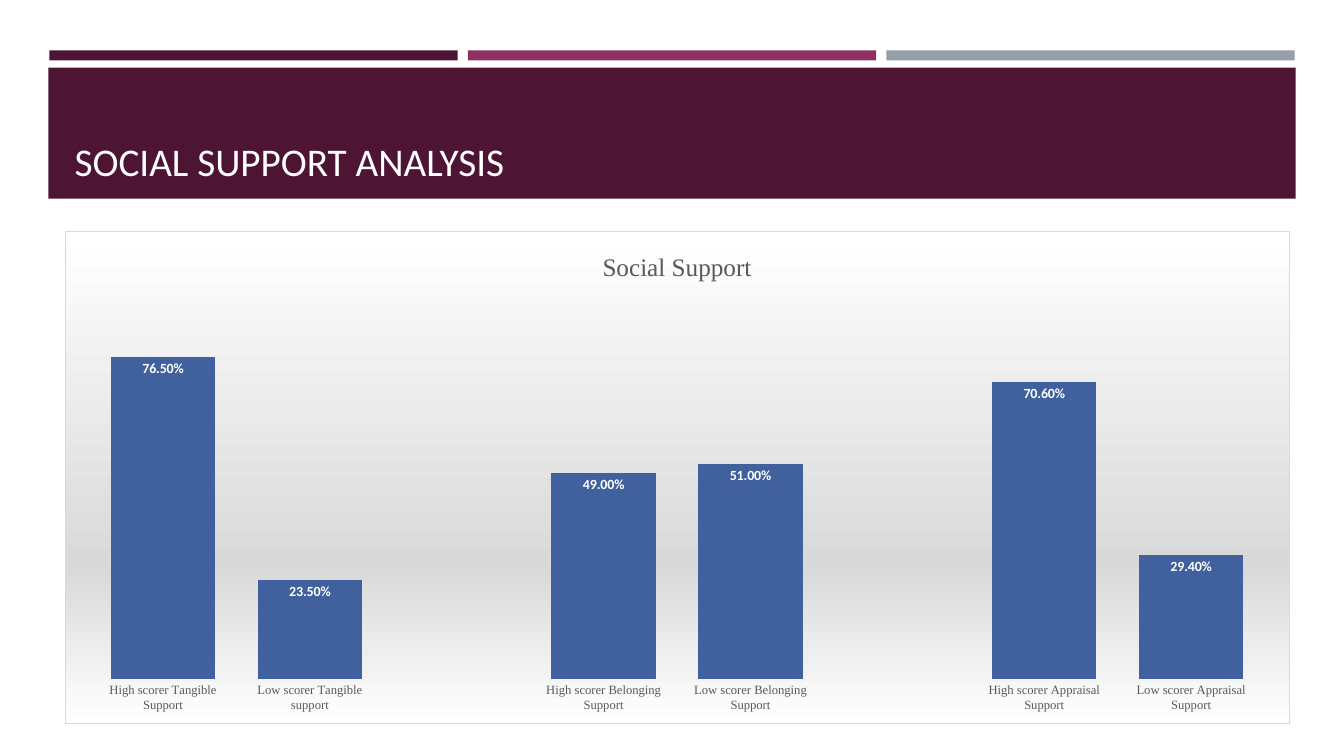
"""Build the social support slide: a banded title above a column chart."""
import pptx
import pptx.chart.data
import pptx.dml.color
import pptx.enum.chart
import pptx.enum.shapes
import pptx.enum.text
import pptx.oxml
import pptx.oxml.ns
import pptx.util

Inches = pptx.util.Inches
Pt = pptx.util.Pt


class Theme:
    plum = "4D1434"
    rose = "903163"
    slate = "969FA7"
    blue = "40619D"
    gray = "595959"
    pale = "D9D9D9"
    white = "FFFFFF"
    sans = "Calibri"
    serif = "Times New Roman"
    head = 28
    title = 18
    label = 10
    tick = 9


def style(font, name, size, color, bold=False):
    font.name = name
    font.size = Pt(size)
    font.bold = bold
    font.color.rgb = pptx.dml.color.RGBColor.from_string(color)


def block(left, top, width, height, color):
    shape = slide.shapes.add_shape(
        pptx.enum.shapes.MSO_SHAPE.RECTANGLE,
        Inches(left), Inches(top), Inches(width), Inches(height))
    shape.shadow.inherit = False
    shape.fill.solid()
    shape.fill.fore_color.rgb = pptx.dml.color.RGBColor.from_string(color)
    shape.line.fill.background()


deck = pptx.Presentation()
deck.slide_width = Inches(13.33)
deck.slide_height = Inches(7.5)
slide = deck.slides.add_slide(deck.slide_layouts[5])

for i, color in enumerate([Theme.plum, Theme.rose, Theme.slate]):
    block(0.49 + i * 4.15, 0.5, 4.05, 0.1, color)
block(0.48, 0.67, 12.37, 1.3, Theme.plum)

title = slide.shapes.title
title.left, title.top = Inches(0.64), Inches(0.77)
title.width, title.height = Inches(12.06), Inches(1.11)
slide.shapes._spTree.append(title._element)
frame = title.text_frame
frame.text = "SOCIAL SUPPORT ANALYSIS"
frame.vertical_anchor = pptx.enum.text.MSO_ANCHOR.BOTTOM
frame.paragraphs[0].alignment = pptx.enum.text.PP_ALIGN.LEFT
style(frame.paragraphs[0].font, Theme.sans, Theme.head, Theme.white)

data = pptx.chart.data.CategoryChartData(number_format="0.00%")
data.categories = [
    "High scorer Tangible Support", "Low scorer Tangible support", "",
    "High scorer Belonging Support", "Low scorer Belonging Support", "",
    "High scorer Appraisal Support", "Low scorer Appraisal Support"]
data.add_series("Series 1",
                [0.765, 0.235, None, 0.49, 0.51, None, 0.706, 0.294])
chart = slide.shapes.add_chart(
    pptx.enum.chart.XL_CHART_TYPE.COLUMN_CLUSTERED,
    Inches(0.64), Inches(2.29), Inches(12.15), Inches(4.89), data).chart
chart.has_legend = False
chart.font.name = Theme.sans
chart.font.size = Pt(Theme.label)

chart.has_title = True
name = chart.chart_title.text_frame
name.text = "Social Support"
style(name.paragraphs[0].font, Theme.serif, Theme.title, Theme.gray)

axis = chart.category_axis
axis.major_tick_mark = pptx.enum.chart.XL_TICK_MARK.NONE
axis.format.line.fill.background()
style(axis.tick_labels.font, Theme.serif, Theme.tick, Theme.gray)

scale = chart.value_axis
scale.visible = False
scale.has_major_gridlines = False
scale.minimum_scale = 0
scale.maximum_scale = 0.9

plot = chart.plots[0]
plot.gap_width = 41
plot.vary_by_categories = False
bars = plot.series[0].format.fill
bars.solid()
bars.fore_color.rgb = pptx.dml.color.RGBColor.from_string(Theme.blue)
plot.has_data_labels = True
labels = plot.data_labels
labels.show_value = True
labels.number_format = "0.00%"
labels.number_format_is_linked = False
labels.position = pptx.enum.chart.XL_LABEL_POSITION.INSIDE_END
style(labels.font, Theme.sans, Theme.label, Theme.white, True)

spaces = pptx.oxml.ns.nsdecls("c", "a")
stops = "".join(
    f'<a:gs pos="{at * 1000}"><a:srgbClr val="{color}"/></a:gs>'
    for at, color in [(0, Theme.white), (68, Theme.pale), (100, Theme.white)])
back = pptx.oxml.parse_xml(
    f'<c:spPr {spaces}><a:gradFill><a:gsLst>{stops}</a:gsLst>'
    f'<a:lin ang="5400000" scaled="0"/></a:gradFill><a:ln w="9525">'
    f'<a:solidFill><a:srgbClr val="{Theme.pale}"/></a:solidFill></a:ln>'
    f'</c:spPr>')
root = chart._chartSpace
root.find(pptx.oxml.ns.qn("c:chart")).addnext(back)

area = root.find(".//" + pptx.oxml.ns.qn("c:plotArea"))
for old in area.findall(pptx.oxml.ns.qn("c:layout")):
    area.remove(old)
spots = "".join(f'<c:{key} val="{value}"/>' for key, value in [
    ("layoutTarget", "inner"), ("xMode", "edge"), ("yMode", "edge"),
    ("x", 0.02), ("y", 0.14), ("w", 0.96), ("h", 0.77)])
area.insert(0, pptx.oxml.parse_xml(
    f'<c:layout {spaces}><c:manualLayout>{spots}</c:manualLayout></c:layout>'))

deck.save("out.pptx")
